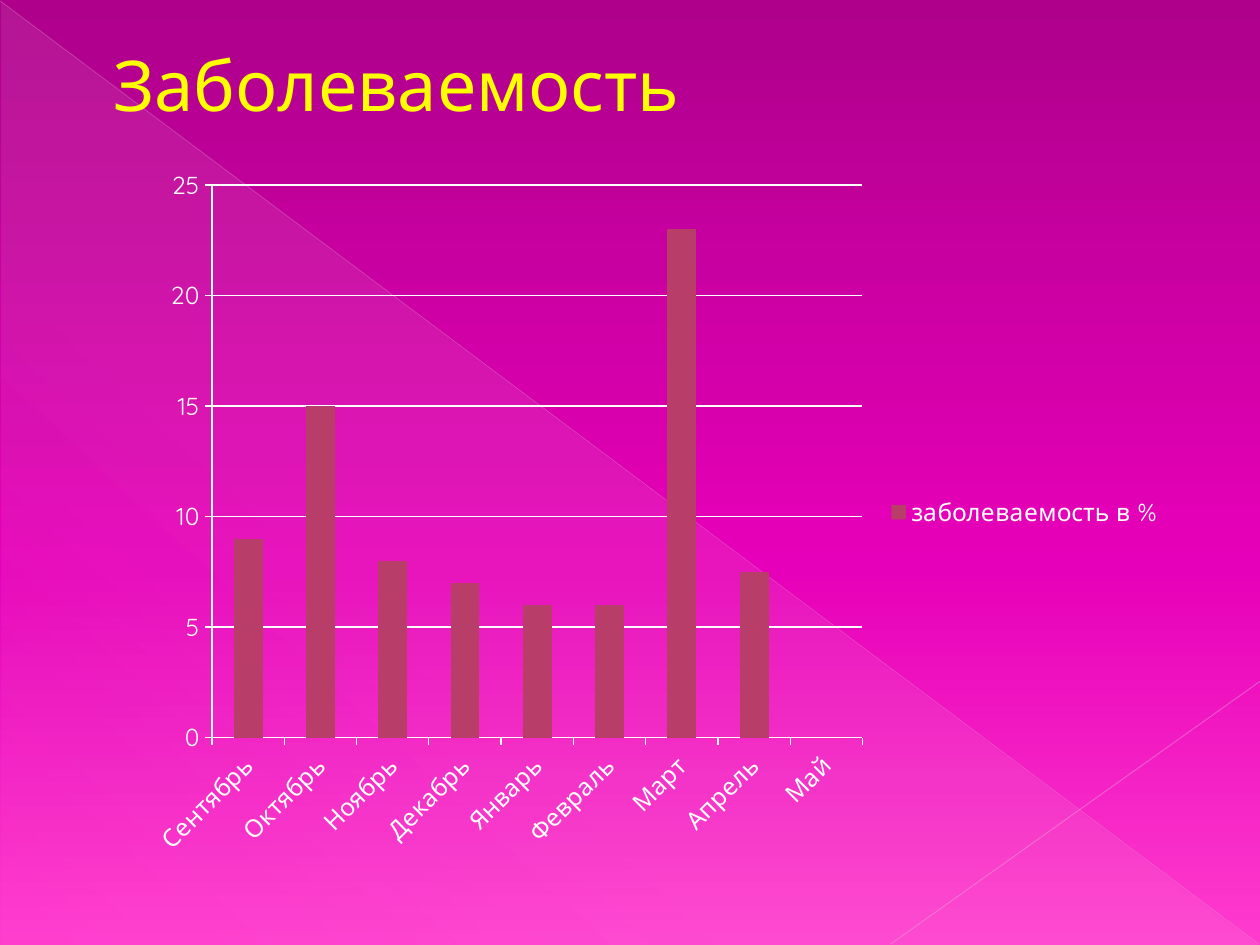
import dataclasses

import pptx
import pptx.chart.data
import pptx.dml.color
import pptx.enum.chart
import pptx.enum.shapes
import pptx.enum.text
import pptx.oxml
import pptx.oxml.ns
import pptx.util

WIDE, HIGH = 10, 7.5
FONT = "Quicksand"
WHITE = "FFFFFF"
qn = pptx.oxml.ns.qn


@dataclasses.dataclass
class Stop:
    pos: int
    hue: str
    alpha: int = 100


@dataclasses.dataclass
class Ray:
    """A thin line; its ends are shares of the slide's size."""
    start: tuple
    end: tuple
    hue: str
    width: float
    alpha: int


BACK = [Stop(0, "AE008B"), Stop(60, "E700B9"), Stop(100, "FF3BCE")]
SHEEN = [Stop(0, "F4E7ED", 10), Stop(70, "F4E7ED", 8), Stop(100, "F4E7ED", 1)]
RAYS = [
    Ray((0, 0.001), (0.999, 0.999), "E9A8D7", 0.39, 35),
    Ray((1, 0.721), (0.707, 0.999), "EBB2DB", 0.47, 45),
]
RATES = {
    "Сентябрь": 9, "Октябрь": 15, "Ноябрь": 8, "Декабрь": 7, "Январь": 6,
    "Февраль": 6, "Март": 23, "Апрель": 7.5, "Май": None,
}


def color(text: str):
    return pptx.dml.color.RGBColor.from_string(text)


def across(share: float):
    return pptx.util.Inches(share * WIDE)


def down(share: float):
    return pptx.util.Inches(share * HIGH)


def box(left: float, top: float, width: float, height: float) -> tuple:
    return across(left), down(top), across(width), down(height)


def node(xml: str):
    """Parse one element of the drawing namespace."""
    head, tail = xml.split(">", 1)
    slash = "/" if head.endswith("/") else ""
    return pptx.oxml.parse_xml(
        f"{head.rstrip('/')} {pptx.oxml.ns.nsdecls('a')}{slash}>{tail}")


def blend(owner, stops: list, angle: int) -> None:
    """Put a gradient in the place of the owner's solid fill."""
    marks = "".join(
        f'<a:gs pos="{s.pos * 1000}"><a:srgbClr val="{s.hue}">'
        f'<a:alpha val="{s.alpha * 1000}"/></a:srgbClr></a:gs>' for s in stops)
    plain = owner.find(qn("a:solidFill"))
    owner.replace(plain, node(
        f'<a:gradFill rotWithShape="1"><a:gsLst>{marks}</a:gsLst>'
        f'<a:lin ang="{angle * 60000}" scaled="0"/></a:gradFill>'))


def draw_ray(slide, ray: Ray) -> None:
    line = slide.shapes.add_connector(
        pptx.enum.shapes.MSO_CONNECTOR.STRAIGHT,
        across(ray.start[0]), down(ray.start[1]),
        across(ray.end[0]), down(ray.end[1]))
    line.line.width = pptx.util.Pt(ray.width)
    line.line.color.rgb = color(ray.hue)
    props = line.element.spPr
    tint = props.find(".//" + qn("a:srgbClr"))
    tint.append(node(f'<a:alpha val="{ray.alpha * 1000}"/>'))
    props.append(node("<a:effectLst/>"))


def style(font, size: float, hue: str = WHITE) -> None:
    font.name = FONT
    font.size = pptx.util.Pt(size)
    font.color.rgb = color(hue)


def write(frame, text: str, *, size: float, hue: str, indent: float = 0,
          edge: str = "", edge_width: float = 0) -> None:
    para = frame.paragraphs[0]
    para.alignment = pptx.enum.text.PP_ALIGN.LEFT
    props = para._p.get_or_add_pPr()
    props.set("marL", str(pptx.util.Inches(indent)))
    props.set("indent", "0")
    run = para.add_run()
    run.text = text
    style(run.font, size, hue)
    if edge:
        run._r.get_or_add_rPr().insert(0, node(
            f'<a:ln w="{pptx.util.Pt(edge_width)}"><a:solidFill>'
            f'<a:srgbClr val="{edge}"/></a:solidFill></a:ln>'))


def draw_chart(slide, rates: dict) -> None:
    kinds = pptx.enum.chart
    data = pptx.chart.data.CategoryChartData()
    data.categories = list(rates)
    data.add_series("заболеваемость в %", list(rates.values()))
    chart = slide.shapes.add_chart(
        kinds.XL_CHART_TYPE.COLUMN_CLUSTERED,
        *box(0.106, 0.164, 0.827, 0.756), data).chart
    style(chart.font, 10)
    chart.has_title = False

    # Columns
    plot = chart.plots[0]
    plot.vary_by_categories = False
    plot.gap_width = 150
    fill = plot.series[0].format.fill
    fill.solid()
    fill.fore_color.rgb = color("B83D68")

    # Axes and grid
    for axis in (chart.category_axis, chart.value_axis):
        axis.major_tick_mark = kinds.XL_TICK_MARK.OUTSIDE
        axis.format.line.color.rgb = color(WHITE)
        axis.format.line.width = pptx.util.Pt(0.75)
        style(axis.tick_labels.font, 14)
    scale = chart.value_axis
    scale.minimum_scale, scale.maximum_scale, scale.major_unit = 0, 25, 5
    scale.has_major_gridlines = True
    grid = scale.major_gridlines.format.line
    grid.color.rgb = color(WHITE)
    grid.width = pptx.util.Pt(0.75)

    # Legend
    chart.has_legend = True
    chart.legend.position = kinds.XL_LEGEND_POSITION.RIGHT
    chart.legend.include_in_layout = False
    style(chart.legend.font, 14)


def main() -> None:
    deck = pptx.Presentation()
    deck.slide_width, deck.slide_height = across(1), down(1)
    slide = deck.slides.add_slide(deck.slide_layouts[5])

    # Background
    slide.background.fill.solid()
    blend(slide.element.find(".//" + qn("p:bgPr")), BACK, 90)

    # Sheen and rays
    sheen = slide.shapes.add_shape(
        pptx.enum.shapes.MSO_SHAPE.RIGHT_TRIANGLE,
        *box(0.001, 0.002, 0.998, 0.998))
    sheen.shadow.inherit = False
    sheen.fill.solid()
    blend(sheen.element.spPr, SHEEN, 133)
    sheen.line.fill.background()
    for ray in RAYS:
        draw_ray(slide, ray)

    # Title, brought in front of the sheen
    title = slide.shapes.title
    title.element.getparent().append(title.element)
    title.left, title.top, title.width, title.height = box(
        0.027, 0.023, 0.799, 0.131)
    title.text_frame.vertical_anchor = pptx.enum.text.MSO_ANCHOR.MIDDLE
    write(title.text_frame, "Заболеваемость", size=40, hue="FFFF00",
          indent=0.53, edge="7F2A48", edge_width=0.5)

    draw_chart(slide, RATES)
    deck.save("out.pptx")


if __name__ == "__main__":
    main()
